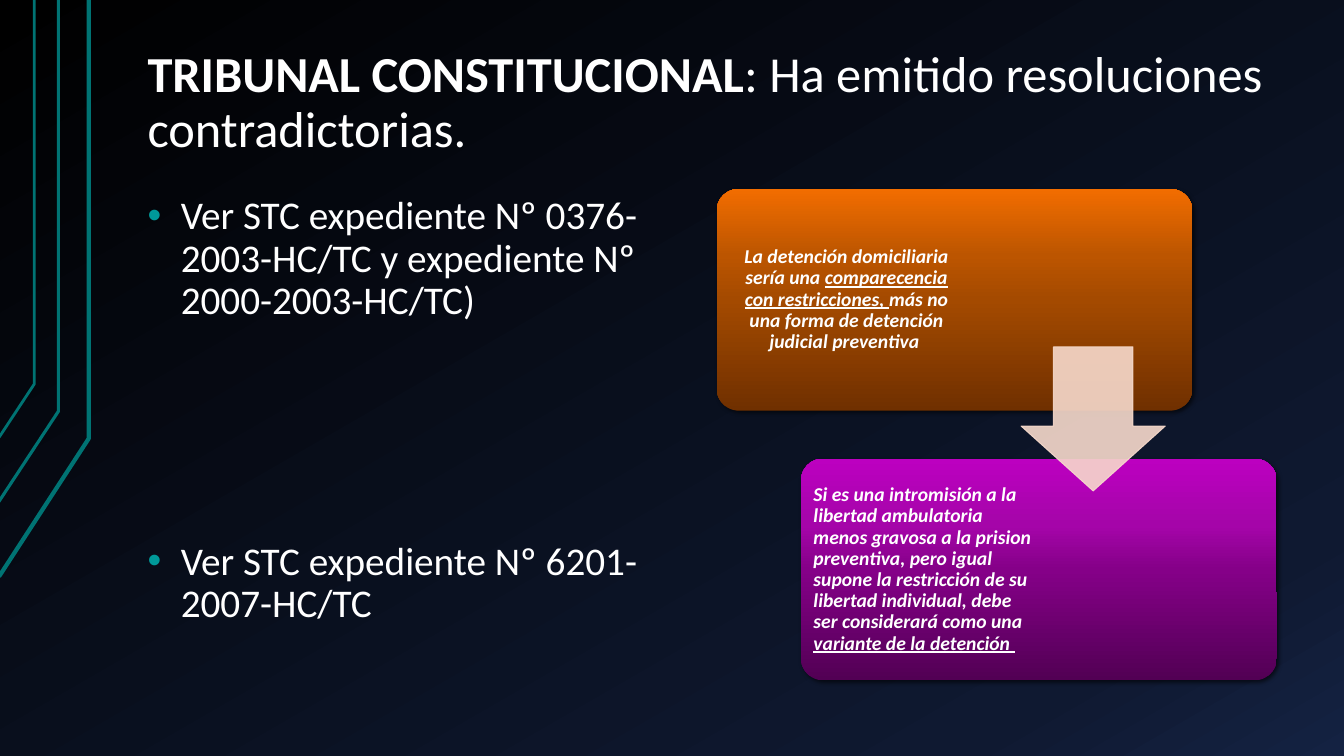
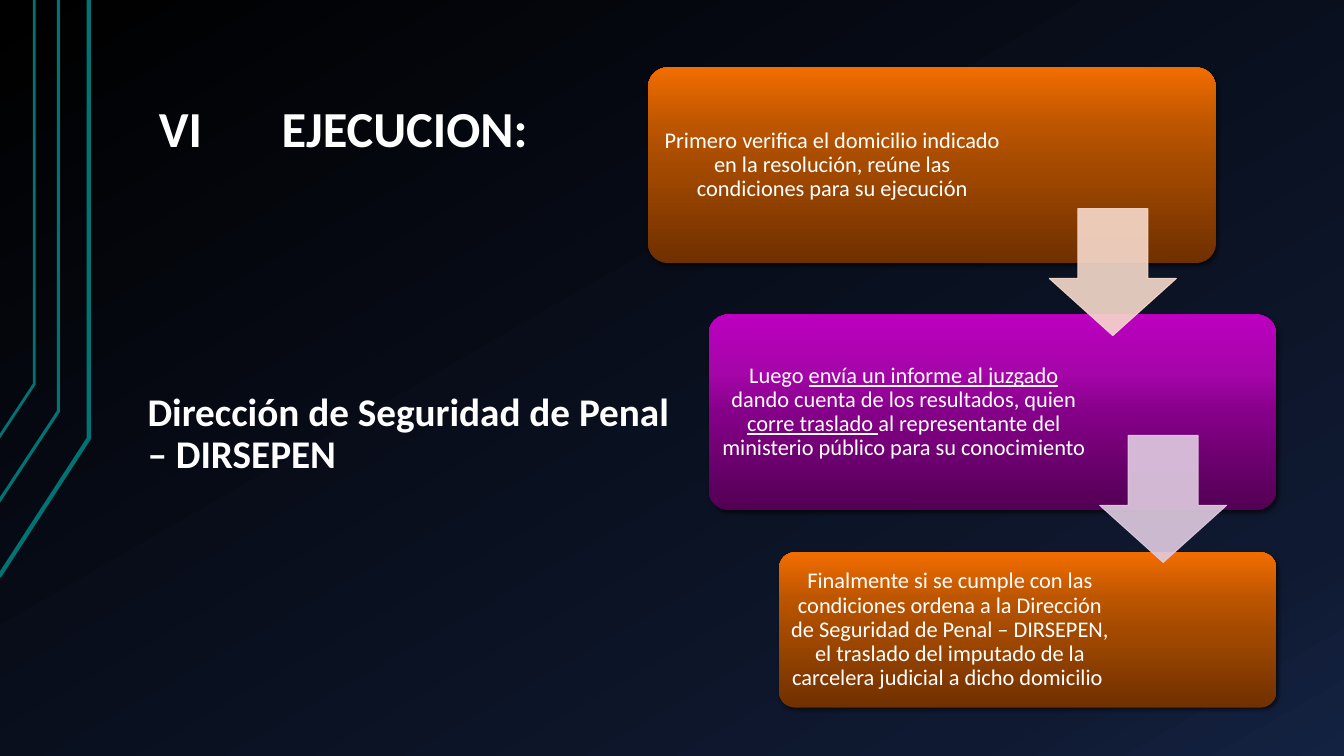
from lxml.etree import SubElement as Sub
from pptx import Presentation
from pptx.dml.color import RGBColor
from pptx.enum.shapes import MSO_SHAPE as Kind
from pptx.enum.text import MSO_ANCHOR as Anchor, MSO_AUTO_SIZE as Auto, PP_ALIGN as Align
from pptx.oxml.ns import qn
from pptx.util import Inches, Pt

WIDE, HIGH = Inches(13.33), Inches(7.5)
COL, ROW = WIDE / 40, HIGH / 40

FONT = "Calibri"
WHITE = RGBColor(0xFF, 0xFF, 0xFF)
BLACK = RGBColor(0x00, 0x00, 0x00)
TEAL = RGBColor(0x00, 0x73, 0x73)
DOT = RGBColor(0x00, 0x99, 0x99)
PEACH = RGBColor(0xF7, 0xDA, 0xCC)
LILAC = RGBColor(0xE0, 0xCC, 0xE1)
NIGHT = [(0, BLACK), (85, RGBColor(0x0F, 0x19, 0x31)), (100, RGBColor(0x14, 0x22, 0x42))]
AMBER = [(0, RGBColor(0x70, 0x30, 0x00)), (50, RGBColor(0xA4, 0x4A, 0x00)),
         (70, RGBColor(0xBC, 0x55, 0x00)), (100, RGBColor(0xF2, 0x6D, 0x00))]
PLUM = [(0, RGBColor(0x52, 0x00, 0x54)), (50, RGBColor(0x85, 0x00, 0x88)),
        (70, RGBColor(0xA5, 0x05, 0xA9)), (100, RGBColor(0xBC, 0x00, 0xC0))]

# Left, top, width and height in columns and rows
TITLE = (4, 1.6, 34, 7.15)
BODY = (4, 10, 16.65, 26)
LOW_BODY = (4, 20.4, 16.65, 15.6)
# Inches: foot x, foot y, knee x, knee y; then points
TRACES = [(-0.01, 5.72, 0.88, 4.35, 3),
          (-0.02, 4.99, 0.58, 4.08, 2.25),
          (-0.01, 4.34, 0.34, 3.81, 2)]


def grid(left, top, wide, high):
    return [int(n) for n in (left * COL, top * ROW, wide * COL, high * ROW)]


def place(shape, area):
    shape.left, shape.top, shape.width, shape.height = grid(*area)


def pad(frame, side, top):
    frame.margin_left = frame.margin_right = Inches(side)
    frame.margin_top = frame.margin_bottom = Inches(top)
    frame.word_wrap = True
    frame.auto_size = Auto.NONE


def blend(owner, fill, stops, angle):
    """Fill with a gradient; the angle runs counter-clockwise."""
    fill.gradient()
    fill.gradient_angle = angle
    ramp = owner.element.find(".//" + qn("a:gsLst"))
    for old in list(ramp):
        ramp.remove(old)
    for share, tone in stops:
        stop = Sub(ramp, qn("a:gs"), pos=str(share * 1000))
        Sub(stop, qn("a:srgbClr"), val=str(tone))


def say(par, runs, size, align=Align.LEFT):
    """Add (text, marks) runs; marks hold b, i and u."""
    par.alignment = align
    par.line_spacing = 0.9
    for text, marks in runs:
        run = par.add_run()
        run.text = text
        font = run.font
        font.name, font.size = FONT, Pt(size)
        font.color.rgb = WHITE
        font.bold, font.italic, font.underline = (m in marks for m in "biu")


def indent(par, dot):
    """Give a list item its teal dot, or no dot and no indent."""
    props = par._p.get_or_add_pPr()
    step = Inches(0.33) if dot else 0
    props.set("marL", str(step))
    props.set("indent", str(-step))
    if dot:
        Sub(Sub(props, qn("a:buClr")), qn("a:srgbClr"), val=str(DOT))
        Sub(props, qn("a:buChar"), char="•")
    else:
        Sub(props, qn("a:buNone"))


def item(par, runs, dot=True, gap=16):
    say(par, runs, 28)
    par.space_before = Pt(gap)
    indent(par, dot)


def trace(slide, layout, foot_x, foot_y, knee_x, knee_y, width):
    """Draw a bent line and hand it to the layout."""
    form = slide.shapes.build_freeform(Inches(foot_x), Inches(foot_y))
    form.add_line_segments([(Inches(knee_x), Inches(knee_y)), (Inches(knee_x), 0)], close=False)
    line = form.convert_to_shape()
    line.shadow.inherit = False
    line.fill.background()
    line.line.color.rgb = TEAL
    line.line.width = Pt(width)
    layout.shapes.element.append(line.element)


def dress(layout):
    blend(layout, layout.background.fill, NIGHT, 300)
    title, body = layout.placeholders[0], layout.placeholders[1]
    for holder, area, anchor in ((title, TITLE, Anchor.BOTTOM), (body, BODY, Anchor.TOP)):
        place(holder, area)
        pad(holder.text_frame, 0.13, 0.07)
        holder.text_frame.vertical_anchor = anchor


def head(slide, runs):
    par = slide.shapes.title.text_frame.paragraphs[0]
    say(par, runs, 36)
    tabs = Sub(par._p.get_or_add_pPr(), qn("a:tabLst"))
    Sub(tabs, qn("a:tab"), pos=str(Inches(1.33)), algn="l")


def card(slide, area, stops, span, runs, size, align=Align.CENTER):
    """Add a rounded card whose text keeps to its left span of columns."""
    box = slide.shapes.add_shape(Kind.ROUNDED_RECTANGLE, *grid(*area))
    box.adjustments[0] = 0.1
    box.line.fill.background()
    blend(box, box.fill, stops, 90)
    box.shadow.inherit = False
    glow = Sub(box.element.spPr.find(qn("a:effectLst")), qn("a:outerShdw"), blurRad=str(Pt(3)),
               dist=str(Pt(2)), dir="2700000", algn="ctr", rotWithShape="0")
    Sub(Sub(glow, qn("a:srgbClr"), val=str(BLACK)), qn("a:alpha"), val="60000")
    frame = box.text_frame
    inset = 0.06 if size < 16 else 0.07
    pad(frame, inset, inset)
    curve = 0.029 * box.height
    frame.margin_right = int(box.width - 2 * curve - span * COL + Inches(inset))
    frame.vertical_anchor = Anchor.MIDDLE
    say(frame.paragraphs[0], runs, size, align)


def arrow(slide, left, top, size, tone):
    spot = grid(left, top, size, size)
    spot[3] = spot[2]
    mark = slide.shapes.add_shape(Kind.DOWN_ARROW, *spot)
    mark.adjustments[0], mark.adjustments[1] = 0.55, 0.45
    mark.shadow.inherit = False
    mark.fill.solid()
    mark.fill.fore_color.rgb = tone
    mark.line.color.rgb = tone
    mark.line.width = Pt(0.75)
    for hue in mark.element.spPr.iter(qn("a:srgbClr")):
        Sub(hue, qn("a:alpha"), val="90000")


def rulings(slide):
    head(slide, [("TRIBUNAL CONSTITUCIONAL", "b"),
                 (": Ha emitido resoluciones contradictorias.", "")])
    frame = slide.placeholders[1].text_frame
    item(frame.paragraphs[0],
         [("Ver STC expediente Nº 0376-2003-HC/TC y expediente Nº 2000-2003-HC/TC)", "")])
    item(frame.add_paragraph(), [("Ver STC expediente Nº 6201-2007-HC/TC", "")], gap=156)
    card(slide, (21.33, 10, 14.16, 11.73), AMBER, 7.35,
         [("La detención domiciliaria sería una ", "bi"),
          ("comparecencia con restricciones, ", "biu"),
          ("más no una forma de detención judicial preventiva ", "bi")], 14)
    card(slide, (23.84, 24.27, 14.16, 11.73), PLUM, 6.99,
         [("Si es una intromisión a la libertad ambulatoria menos gravosa a la prision "
           "preventiva, pero igual supone la restricción de su libertad individual, "
           "debe ser considerará como una ", "bi"),
          ("variante de la detención ", "biu")], 14, Align.LEFT)
    arrow(slide, 30.39, 18.35, 4.29, PEACH)


def steps(slide):
    head(slide, [(" VI\tEJECUCION:", "b")])
    body = slide.placeholders[1]
    place(body, LOW_BODY)
    item(body.text_frame.paragraphs[0],
         [("Dirección de Seguridad de Penal – DIRSEPEN", "b")], dot=False)
    card(slide, (19.29, 3.57, 16.89, 10.35), AMBER, 10.62,
         [("Primero verifica el domicilio indicado en la resolución, reúne las "
           "condiciones para su ejecución", "")], 16)
    card(slide, (21.09, 16.64, 16.89, 10.35), PLUM, 11.28,
         [("Luego ", ""), ("envía un informe al juzgado", "u"),
          (" dando cuenta de los resultados, quien ", ""), ("corre traslado ", "u"),
          ("al representante del ministerio público para su conocimiento", "")], 16)
    card(slide, (23.19, 29.23, 14.79, 8.21), AMBER, 9.9,
         [("Finalmente si se cumple con las condiciones ordena a la Dirección de "
           "Seguridad de Penal – DIRSEPEN, el traslado del imputado de la carcelera "
           "judicial a dicho domicilio ", "")], 16)
    for n, tone in enumerate((PEACH, LILAC)):
        arrow(slide, 31.23 + 1.5 * n, 11.04 + 12 * n, 3.78, tone)


def main():
    deck = Presentation()
    deck.slide_width, deck.slide_height = WIDE, HIGH
    layout = deck.slide_layouts[1]
    dress(layout)
    first, second = (deck.slides.add_slide(layout) for _ in range(2))
    for bend in TRACES:
        trace(first, layout, *bend)
    rulings(first)
    steps(second)
    deck.save("out.pptx")


if __name__ == "__main__":
    main()
